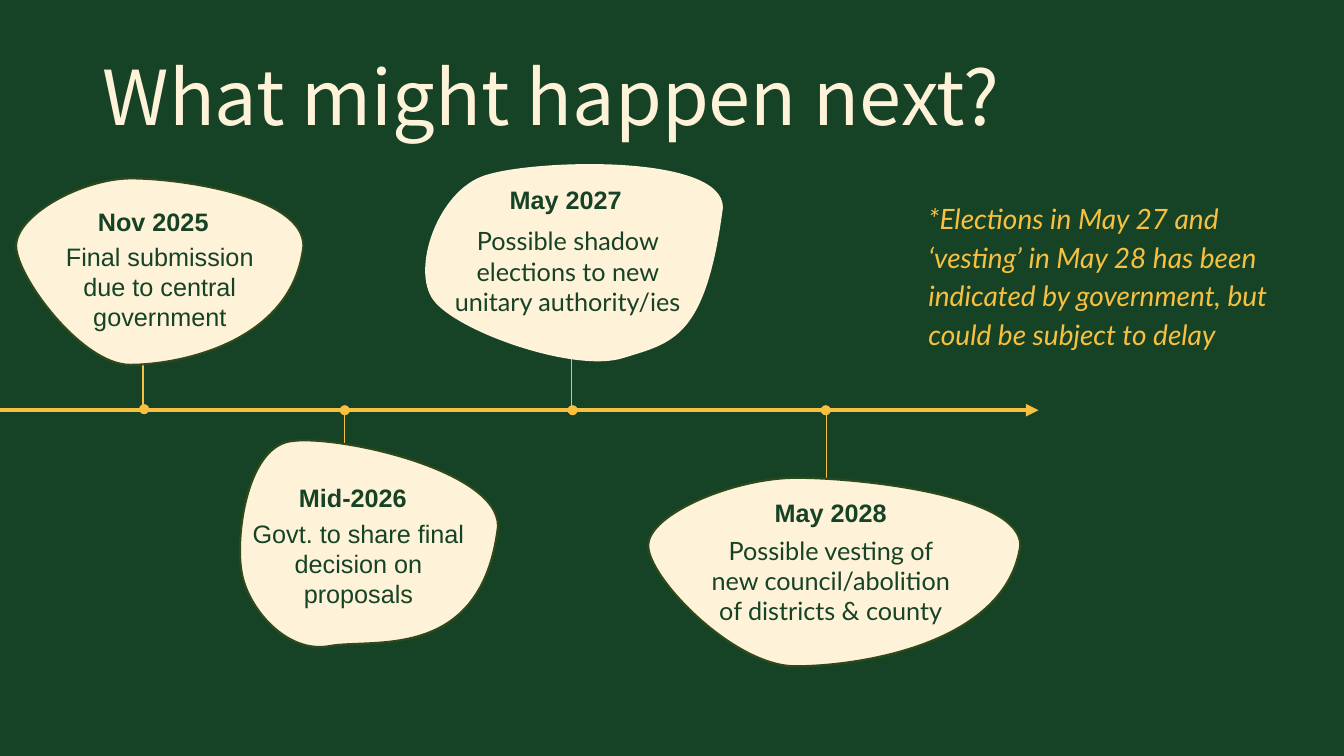
"""Builds a timeline slide of four dated milestones on rounded pebbles."""
from lxml import etree
from pptx import Presentation, util as u
from pptx.dml.color import RGBColor
from pptx.enum import shapes, text
from pptx.oxml import ns

GREEN, CREAM, GOLD, OLIVE = "164226", "FEF2D9", "F8C041", "2E4A1B"
AXIS_Y, AXIS_START, AXIS_END = 4.07, -0.01, 10.3
DOT = 0.1

TITLE = "What might happen next?"
NOTE = ("*Elections in May 27 and ‘vesting’ in May 28 has been indicated "
        "by government, but could be subject to delay")

MILESTONES = [
    dict(date="Nov 2025", date_at=(0.7, 2), detail="Final submission due to central government",
         detail_at=(0.41, 2.34, 2.35), font="Arial", stem=(1.42, 3.54), dot_at=(1.38, 4.01),
         outline=OLIVE, bounds=(0.16, 1.77, 2.85, 1.86),
         pebble=[(0.16, 2.44), (0.16, 2.13), (0.82, 1.77), (1.3, 1.77),
                 (1.77, 1.77), (3.01, 1.94), (3.01, 2.44),
                 (2.9, 3.41), (1.76, 3.62), (1.29, 3.62),
                 (0.81, 3.62), (0.16, 2.74), (0.16, 2.44)]),
    dict(date="Mid-2026", date_at=(2.68, 4.74), detail="Govt. to share final decision on proposals",
         detail_at=(2.38, 5.09, 2.35), font="Arial", stem=(3.42, 4.5), dot_at=(3.37, 4.02),
         outline=OLIVE, bounds=(2.38, 4.37, 2.56, 2.06),
         pebble=[(2.4, 5.69), (2.33, 5.35), (2.44, 4.46), (2.87, 4.38),
                 (3.29, 4.3), (4.94, 4.65), (4.94, 5.22),
                 (4.78, 6.58), (3.69, 6.33), (3.27, 6.41),
                 (2.84, 6.49), (2.46, 6.03), (2.4, 5.69)]),
    dict(date="May 2027", date_at=(4.79, 1.78),
         detail="Possible shadow elections to new unitary authority/ies",
         detail_at=(4.34, 2.19, 2.58), font="Lato", stem=(5.67, 3.35), dot_at=(5.63, 4.02),
         outline=None, bounds=(4.22, 1.63, 2.95, 1.96),
         pebble=[(4.3, 2.98), (4.07, 2.68), (4.34, 1.89), (4.81, 1.74),
                 (5.29, 1.58), (7.17, 1.52), (7.17, 2.06),
                 (7, 3.36), (6.67, 3.4), (6.19, 3.55),
                 (5.71, 3.71), (4.53, 3.29), (4.3, 2.98)]),
    dict(date="May 2028", date_at=(7.42, 4.88),
         detail="Possible vesting of new council/abolition of districts & county",
         detail_at=(6.94, 5.26, 2.6), font="Lato", stem=(8.2, 4.8), dot_at=(8.14, 4.02),
         outline=OLIVE, bounds=(6.43, 4.74, 3.69, 1.88),
         pebble=[(6.43, 5.41), (6.43, 5.1), (7.28, 4.74), (7.9, 4.74),
                 (8.52, 4.74), (10.12, 4.91), (10.12, 5.41),
                 (9.98, 6.4), (8.5, 6.61), (7.89, 6.61),
                 (7.27, 6.61), (6.42, 5.72), (6.43, 5.41)]),
]


def rgb(code):
    return RGBColor.from_string(code)


def paint(shape, fill, outline=None):
    shape.shadow.inherit = False
    shape.fill.solid()
    shape.fill.fore_color.rgb = rgb(fill)
    if outline:
        shape.line.color.rgb = rgb(outline)
        shape.line.width = u.Pt(1.5)
    else:
        shape.line.fill.background()


def add_line(slide, start, end, width):
    line = slide.shapes.add_connector(shapes.MSO_CONNECTOR.STRAIGHT,
                                      *map(u.Inches, start + end))
    line.line.color.rgb = rgb(GOLD)
    line.line.width = u.Pt(width)
    etree.SubElement(line._element.spPr, ns.qn("a:effectLst"))
    return line


def add_words(slide, at, words, size, font, color, bold=False, italic=False,
              align=text.PP_ALIGN.CENTER, fit=text.MSO_AUTO_SIZE.SHAPE_TO_FIT_TEXT):
    frame = slide.shapes.add_textbox(*map(u.Inches, at)).text_frame
    frame.text = words
    frame.word_wrap = True
    frame.auto_size = fit
    paragraph = frame.paragraphs[0]
    paragraph.alignment = align
    letters = paragraph.runs[0].font
    letters.size, letters.name = u.Pt(size), font
    letters.bold, letters.italic = bold, italic
    letters.color.rgb = rgb(color)
    return frame


def add_pebble(slide, bounds, knots, outline):
    left, top, width, height = bounds
    builder = slide.shapes.build_freeform(u.Inches(left), u.Inches(top))
    builder.add_line_segments([(u.Inches(left + width), u.Inches(top + height))], close=False)
    pebble = builder.convert_to_shape()
    contour = pebble._element.spPr.find(".//" + ns.qn("a:path"))
    for segment in list(contour):
        contour.remove(segment)
    curves = [("a:moveTo", knots[:1])]
    curves += [("a:cubicBezTo", knots[i:i + 3]) for i in range(1, len(knots), 3)]
    for tag, points in curves:
        segment = etree.SubElement(contour, ns.qn(tag))
        for x, y in points:
            etree.SubElement(segment, ns.qn("a:pt"),
                             x=str(u.Inches(x - left)), y=str(u.Inches(y - top)))
    etree.SubElement(contour, ns.qn("a:close"))
    paint(pebble, CREAM, outline)


def add_milestone(slide, milestone):
    stem_x, stem_end = milestone["stem"]
    add_line(slide, (stem_x, stem_end), (stem_x, AXIS_Y), 1)
    add_pebble(slide, milestone["bounds"], milestone["pebble"], milestone["outline"])
    add_words(slide, milestone["date_at"] + (1.64, 0.4), milestone["date"],
              18, "Arial", GREEN, bold=True)
    add_words(slide, milestone["detail_at"] + (1.01,), milestone["detail"],
              18, milestone["font"], GREEN)
    dot = slide.shapes.add_shape(shapes.MSO_SHAPE.OVAL,
                                 *map(u.Inches, milestone["dot_at"] + (DOT, DOT)))
    paint(dot, GOLD)


def main():
    deck = Presentation()
    deck.slide_width, deck.slide_height = u.Inches(13.33), u.Inches(7.5)
    slide = deck.slides.add_slide(deck.slide_layouts[6])
    slide.background.fill.solid()
    slide.background.fill.fore_color.rgb = rgb(GREEN)

    title = add_words(slide, (0.92, 0.28, 11.5, 1.45), TITLE, 54, "Noto Sans CJK KR", CREAM,
                      align=text.PP_ALIGN.LEFT, fit=text.MSO_AUTO_SIZE.NONE)
    title.vertical_anchor = text.MSO_ANCHOR.MIDDLE
    title.paragraphs[0].line_spacing = 0.9

    timeline = add_line(slide, (AXIS_START, AXIS_Y), (AXIS_END, AXIS_Y), 3)
    etree.SubElement(timeline.line._get_or_add_ln(), ns.qn("a:tailEnd"), type="triangle")
    for milestone in MILESTONES:
        add_milestone(slide, milestone)

    note = add_words(slide, (8.61, 1.9, 4.15, 1.63), NOTE, 20, "Lato", GOLD, italic=True,
                     align=text.PP_ALIGN.LEFT)
    remark = note.paragraphs[0]
    remark._p.get_or_add_pPr().set("marL", str(u.Inches(0.5)))
    remark.line_spacing = 1.15
    remark.space_after = u.Pt(8)
    deck.save("out.pptx")


if __name__ == "__main__":
    main()
